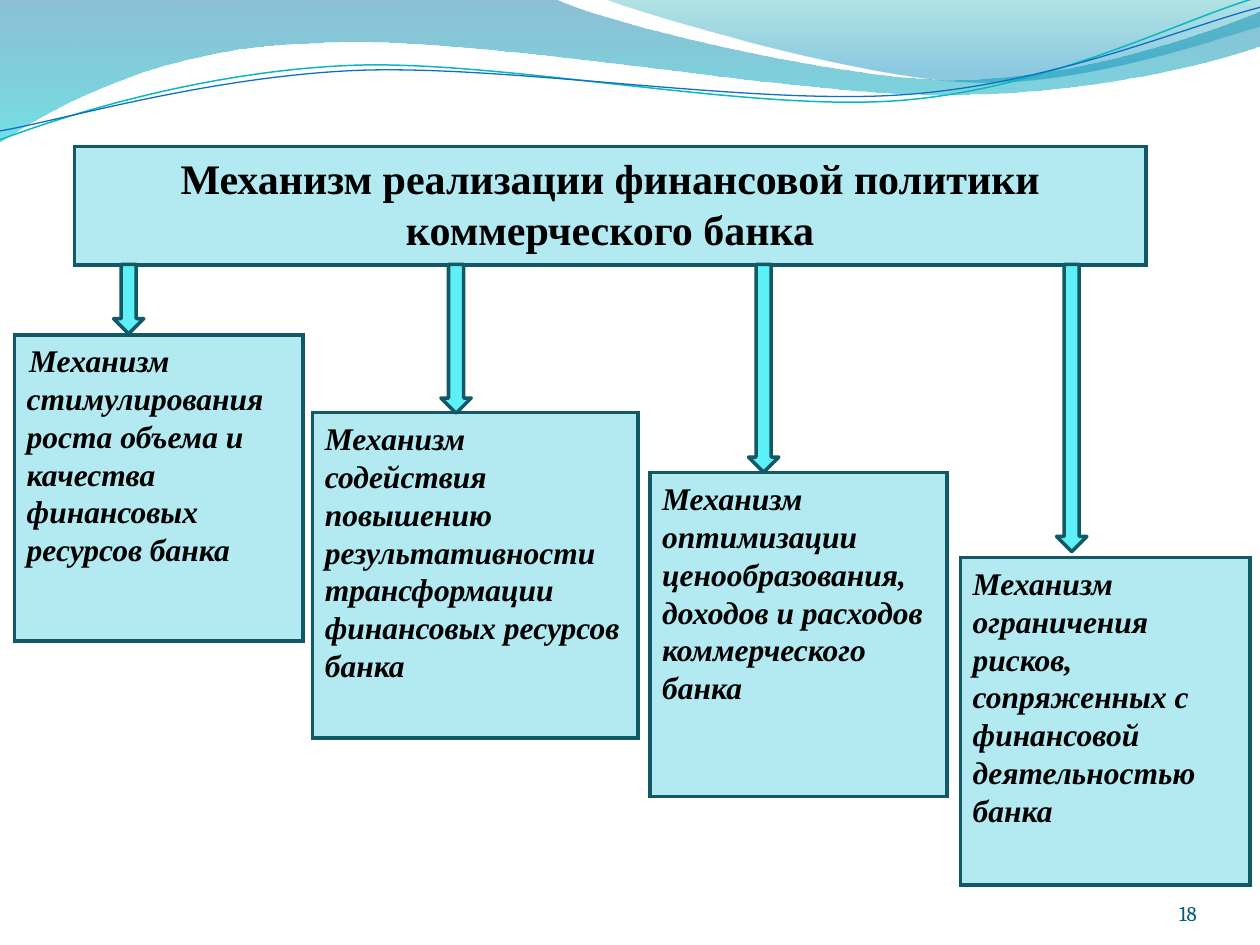
from dataclasses import dataclass

from lxml.etree import SubElement
from pptx import Presentation
from pptx.dml.color import RGBColor
from pptx.enum.shapes import MSO_SHAPE
from pptx.enum.text import MSO_ANCHOR, MSO_AUTO_SIZE, PP_ALIGN
from pptx.oxml.ns import qn
from pptx.util import Cm, Pt


@dataclass(frozen=True)
class Theme:
    """Colours, fonts and type sizes of the slide."""
    panel: str = "B3EAF2"
    arrow: str = "5EF0F7"
    border: str = "115964"
    ink: str = "000000"
    number: str = "045D75"
    text_font: str = "Times New Roman"
    number_font: str = "Cambria"
    heading_size: float = 24
    panel_size: float = 18
    number_size: float = 12
    border_width: float = 2


THEME = Theme()

BANDS = [
    ([((0, 0),), ((11.18, -0.03),),
      ((12.09, 0.43), (16.87, 1.6), (19.25, 1.6)),
      ((21.69, 1.6), (24.33, 0.66), (25.4, 0.23)),
      ((25.43, 0.91),),
      ((24.97, 1.12), (22.1, 1.93), (18.95, 1.91)),
      ((15.8, 1.91), (9.7, 0.71), (6.53, 0.86)),
      ((3.25, 0.91), (1.17, 2.11), (-0.03, 2.87)),
      ((0, 0),)],
     [(0, "0074A1", 45), (1, "00C6CF", 55)]),
    ([((12.17, -0.03),),
      ((12.93, 0.28), (17.32, 1.57), (19.53, 1.65)),
      ((21.74, 1.75), (24.41, 0.81), (25.4, 0.53)),
      ((25.4, 0),), ((12.17, -0.03),)],
     [(0, "00A1A9", 30), (0.8, "008BBF", 45)]),
]

STRANDS = [
    ([((0, 2.82),),
      ((1.22, 2.36), (4.01, 1.45), (7.04, 1.32)),
      ((10.03, 1.19), (15.06, 2.26), (18.11, 2.03)),
      ((21.16, 1.8), (23.83, 0.38), (25.35, -0.05))], "0AB8BF", 0.85),
    ([((0, 2.64),),
      ((1.19, 2.44), (4.17, 1.55), (7.19, 1.42)),
      ((10.24, 1.3), (15.16, 2.13), (18.21, 1.91)),
      ((21.23, 1.7), (23.9, 0.53), (25.4, 0.15))], "0F6FC6", 0.75),
]

HEADING = "Механизм реализации финансовой политики коммерческого банка"
HEADING_BOX = (1.5, 2.95, 21.6, 2.39)
ARROW_TOP, ARROW_WIDTH = 5.33, 0.61

MECHANISMS = [
    ("Механизм стимулирования роста объема и качества финансовых ресурсов банка",
     (0.29, 6.75, 5.82, 6.17), 2.29, 1.4),
    ("Механизм содействия повышению результативности трансформации "
     "финансовых ресурсов банка",
     (6.3, 8.32, 6.56, 6.56), 8.89, 3),
    ("Механизм оптимизации ценообразования, доходов и расходов коммерческого банка",
     (13.1, 9.53, 5.99, 6.53), 15.09, 4.19),
    ("Механизм ограничения рисков, сопряженных с финансовой деятельностью банка",
     (19.36, 11.24, 5.84, 6.6), 21.3, 5.79),
]


def apply(target, values):
    """Set every attribute in values on target."""
    for attribute, value in values.items():
        setattr(target, attribute, value)


def add_outline(slide, segments, close):
    """Add a freeform of lines and cubic curves."""
    start, *rest = [(Cm(x), Cm(y)) for segment in segments for x, y in segment]
    builder = slide.shapes.build_freeform(*start)
    builder.add_line_segments(rest, close=close)
    outline = builder.convert_to_shape()
    outline.shadow.inherit = False
    legs = iter(list(outline._element.spPr.iter(qn("a:lnTo"))))
    for segment in segments[1:]:
        parts = [next(legs) for _ in segment]
        if len(parts) == 3:
            curve = parts[0]
            curve.addprevious(bend := curve.makeelement(qn("a:cubicBezTo")))
            for part in parts:
                bend.append(part[0])
                part.getparent().remove(part)
    return outline


def add_band(slide, segments, stops):
    """Add a wave band with a translucent vertical gradient."""
    band = add_outline(slide, segments, True)
    band.line.fill.background()
    band.fill.gradient()
    band.fill.gradient_angle = 270
    for stop, (position, colour, _) in zip(band.fill.gradient_stops, stops):
        stop.position = position
        stop.color.rgb = RGBColor.from_string(colour)
    for tint, (_, _, opacity) in zip(band._element.spPr.iter(qn("a:srgbClr")), stops):
        SubElement(tint, qn("a:alpha"), val=str(opacity * 1000))


def add_strand(slide, segments, colour, width):
    """Add a thin wave line."""
    strand = add_outline(slide, segments, False)
    strand.fill.background()
    strand.line.color.rgb = RGBColor.from_string(colour)
    strand.line.width = Pt(width)


def paint(shape, fill):
    """Give a shape its fill and the common border."""
    shape.fill.solid()
    shape.fill.fore_color.rgb = RGBColor.from_string(fill)
    shape.line.color.rgb = RGBColor.from_string(THEME.border)
    shape.line.width = Pt(THEME.border_width)


def sharpen(shape):
    """Give the border of a shape square corners."""
    SubElement(shape._element.spPr.find(qn("a:ln")), qn("a:miter"), lim="800000")


def write(shape, text, size, align, anchor, font=THEME.text_font, colour=THEME.ink,
          inset=(0.25, 0.13), **style):
    """Write one formatted paragraph into a shape."""
    frame = shape.text_frame
    frame.text = text
    across, down = map(Cm, inset)
    apply(frame, dict(word_wrap=True, auto_size=MSO_AUTO_SIZE.NONE, vertical_anchor=anchor,
                      margin_left=across, margin_right=across,
                      margin_top=down, margin_bottom=down))
    paragraph = frame.paragraphs[0]
    apply(paragraph, dict(alignment=align, line_spacing=1.0))
    run_font = paragraph.runs[0].font
    apply(run_font, dict(name=font, size=Pt(size), **style))
    run_font.color.rgb = RGBColor.from_string(colour)


def add_heading(slide):
    """Format the title placeholder as the heading panel."""
    heading = slide.shapes.title
    apply(heading, dict(zip(("left", "top", "width", "height"), map(Cm, HEADING_BOX))))
    paint(heading, THEME.panel)
    sharpen(heading)
    write(heading, HEADING, THEME.heading_size, PP_ALIGN.CENTER, MSO_ANCHOR.TOP, bold=True)


def add_block(slide, kind, box, fill):
    """Add a bordered preset shape."""
    block = slide.shapes.add_shape(kind, *map(Cm, box))
    block.shadow.inherit = False
    paint(block, fill)
    return block


def add_mechanism(slide, text, box, arrow_left, arrow_height):
    """Add a mechanism panel and the arrow that leads to it."""
    panel = add_block(slide, MSO_SHAPE.RECTANGLE, box, THEME.panel)
    sharpen(panel)
    write(panel, text, THEME.panel_size, PP_ALIGN.LEFT, MSO_ANCHOR.TOP, bold=True, italic=True)
    add_block(slide, MSO_SHAPE.DOWN_ARROW,
              (arrow_left, ARROW_TOP, ARROW_WIDTH, arrow_height), THEME.arrow)
    return panel


def add_number(slide, number):
    """Add the slide number."""
    label = slide.shapes.add_textbox(Cm(22.02), Cm(17.65), Cm(2.11), Cm(1.02))
    write(label, number, THEME.number_size, PP_ALIGN.RIGHT, MSO_ANCHOR.BOTTOM,
          THEME.number_font, THEME.number, (0, 0))


def main():
    """Build and save the slide."""
    deck = Presentation()
    apply(deck, dict(slide_width=Cm(25.4), slide_height=Cm(19.05)))
    slide = deck.slides.add_slide(deck.slide_layouts[5])
    for band in BANDS:
        add_band(slide, *band)
    for strand in STRANDS:
        add_strand(slide, *strand)
    add_heading(slide)
    panels = [add_mechanism(slide, *mechanism) for mechanism in MECHANISMS]
    first_paragraph = panels[0].text_frame.paragraphs[0]
    first_paragraph._p.get_or_add_pPr().set("indent", str(Cm(0.05)))
    add_number(slide, "18")
    deck.save("out.pptx")


if __name__ == "__main__":
    main()
